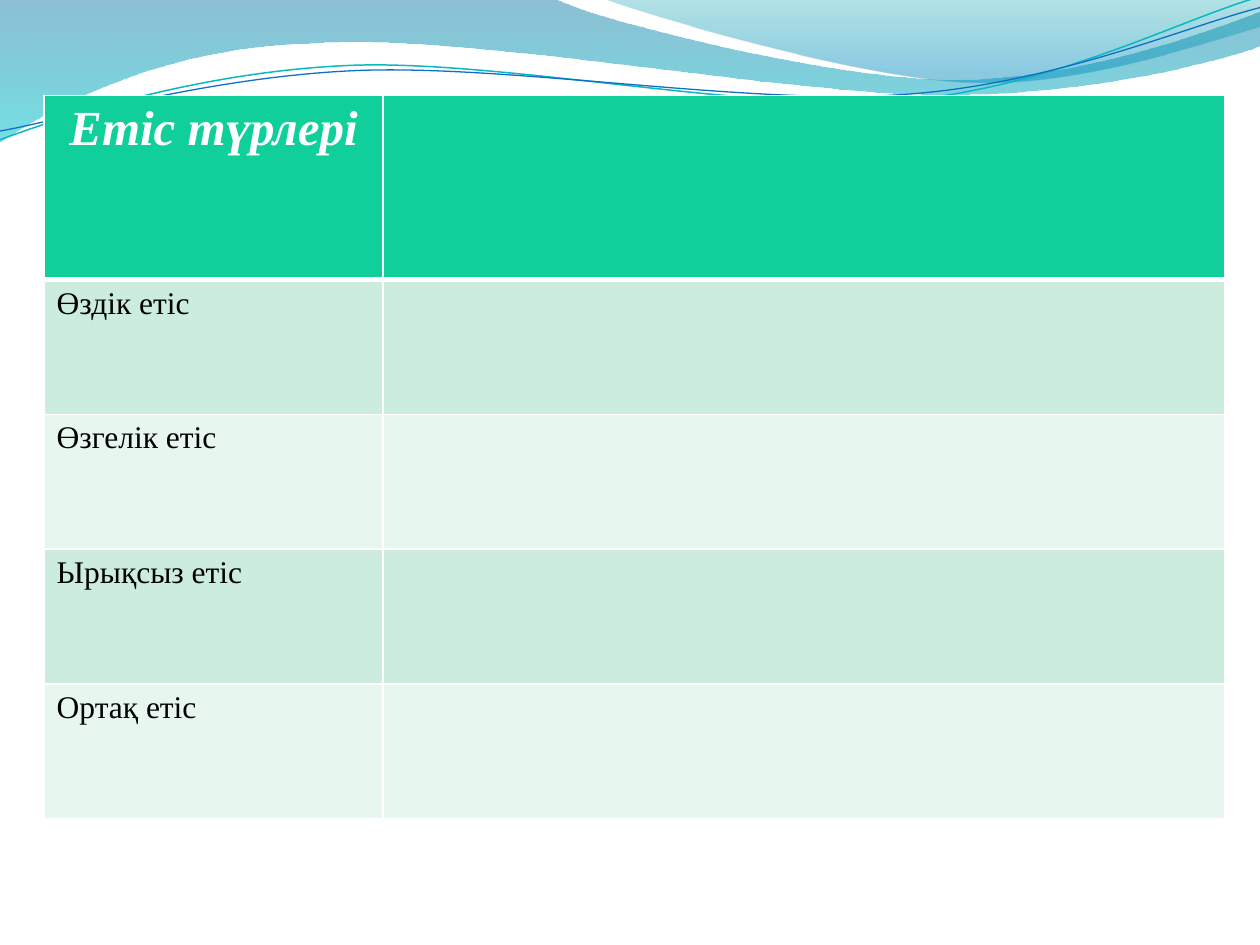
import math

from lxml import etree
from pptx import Presentation
from pptx.dml.color import RGBColor
from pptx.enum import text
from pptx.oxml.ns import qn
from pptx.util import Inches, Pt


def color(value):
    return RGBColor.from_string(value)


def draw_curve(page, frame, start, segments, closed, tilt=0):
    left, top, width, height = frame
    builder = page.shapes.build_freeform(Inches(start[0]), Inches(start[1]))
    builder.add_line_segments([(Inches(s[-2]), Inches(s[-1])) for s in segments], close=closed)
    shape = builder.convert_to_shape()
    shape.left, shape.top, shape.width, shape.height = [Inches(value) for value in frame]
    shape.rotation = -tilt % 360
    shape.shadow.inherit = False
    outline = next(shape.element.spPr.iter(qn("a:path")))
    for child in list(outline):
        outline.remove(child)
    outline.set("w", str(shape.width))
    outline.set("h", str(shape.height))
    cosine, sine = math.cos(math.radians(tilt)), math.sin(math.radians(tilt))
    for number, segment in enumerate([start] + segments):
        kind = "moveTo" if number == 0 else "lnTo" if len(segment) == 2 else "cubicBezTo"
        step = etree.SubElement(outline, qn(f"a:{kind}"))
        for x, y in zip(segment[::2], segment[1::2]):
            dx, dy = x - left - width / 2, y - top - height / 2
            etree.SubElement(step, qn("a:pt"),
                             x=str(Inches(width / 2 + dx * cosine - dy * sine)),
                             y=str(Inches(height / 2 + dx * sine + dy * cosine)))
    if closed:
        etree.SubElement(outline, qn("a:close"))
    return shape


deck = Presentation()
deck.slide_width, deck.slide_height = Inches(10), Inches(7.5)
page = deck.slides.add_slide(deck.slide_layouts[6])

waves = [
    ((-0.01, -0.01, 10.02, 1.14), (0, 0),
     [(4.4, -0.01), (4.76, 0.17, 6.64, 0.63, 7.58, 0.63), (8.53, 0.63, 9.58, 0.26, 10, 0.09),
      (10.01, 0.36), (9.83, 0.44, 8.7, 0.76, 7.46, 0.75), (6.22, 0.75, 3.82, 0.28, 2.57, 0.34),
      (1.29, 0.36, 0.46, 0.83, -0.01, 1.13), (0, 0)],
     [(0, "0074A1", 45), (1, "00C6CF", 55)]),
    ((4.79, -0.01, 5.21, 0.7), (4.79, -0.01),
     [(5.09, 0.11, 6.82, 0.62, 7.69, 0.65), (8.56, 0.69, 9.61, 0.32, 10, 0.21), (10, 0),
      (4.79, -0.01)],
     [(0, "00A1A9", 30), (0.8, "008BBF", 45)]),
]
for frame, start, segments, stops in waves:
    wave = draw_curve(page, frame, start, segments, True)
    wave.line.fill.background()
    wave.fill.gradient()
    wave.fill.gradient_angle = 270
    for stop, (position, tint, opacity) in zip(wave.fill.gradient_stops, stops):
        stop.position = position
        stop.color.rgb = color(tint)
    for tag, (position, tint, opacity) in zip(wave.element.spPr.iter(qn("a:srgbClr")), stops):
        etree.SubElement(tag, qn("a:alpha"), val=str(opacity * 1000))

strands = [
    ((-0.02, 0.22, 10.02, 0.71), (0, 1.11),
     [(0.48, 0.93, 1.58, 0.57, 2.77, 0.52), (3.95, 0.47, 5.93, 0.89, 7.13, 0.8),
      (8.33, 0.71, 9.38, 0.15, 9.98, -0.02)], "0AB8BF", 0.85),
    ((-0.02, 0.3, 10.03, 0.58), (0, 1.04),
     [(0.47, 0.96, 1.64, 0.61, 2.83, 0.56), (4.03, 0.51, 5.97, 0.84, 7.17, 0.75),
      (8.36, 0.67, 9.41, 0.21, 10, 0.06)], "0F6FC6", 0.75),
]
for frame, start, segments, tint, width in strands:
    strand = draw_curve(page, frame, start, segments, False, 2.7)
    strand.fill.background()
    strand.line.color.rgb = color(tint)
    strand.line.width = Pt(width)

labels = ["Етіс түрлері", "Өздік етіс", "Өзгелік етіс", "Ырықсыз етіс", "Ортақ етіс"]
table = page.shapes.add_table(5, 2, Inches(0.35), Inches(0.76), Inches(9.37), Inches(5.74)).table
for column, width in zip(table.columns, (2.69, 6.68)):
    column.width = Inches(width)
for index, label in enumerate(labels):
    header = index == 0
    table.rows[index].height = Inches(1.46 if header else 1.07)
    for cell in table.rows[index].cells:
        properties = cell._tc.get_or_add_tcPr()
        for side in "LRTB":
            thick = (index, side) in ((0, "B"), (1, "T"))
            border = etree.SubElement(properties, qn(f"a:ln{side}"), w=str(Pt(3 if thick else 1)))
            paint = etree.SubElement(border, qn("a:solidFill"))
            etree.SubElement(paint, qn("a:srgbClr"), val="FFFFFF")
        cell.fill.solid()
        cell.fill.fore_color.rgb = color("10CF9B" if header else "CCEDDE" if index % 2 else "E7F6EF")
    cell = table.cell(index, 0)
    cell.text = label
    para = cell.text_frame.paragraphs[0]
    para.alignment = text.PP_ALIGN.CENTER if header else text.PP_ALIGN.LEFT
    para.font.name = "Times New Roman"
    para.font.size = Pt(28 if header else 18)
    para.font.bold = para.font.italic = header
    para.font.color.rgb = color("FFFFFF" if header else "000000")

deck.save("out.pptx")
